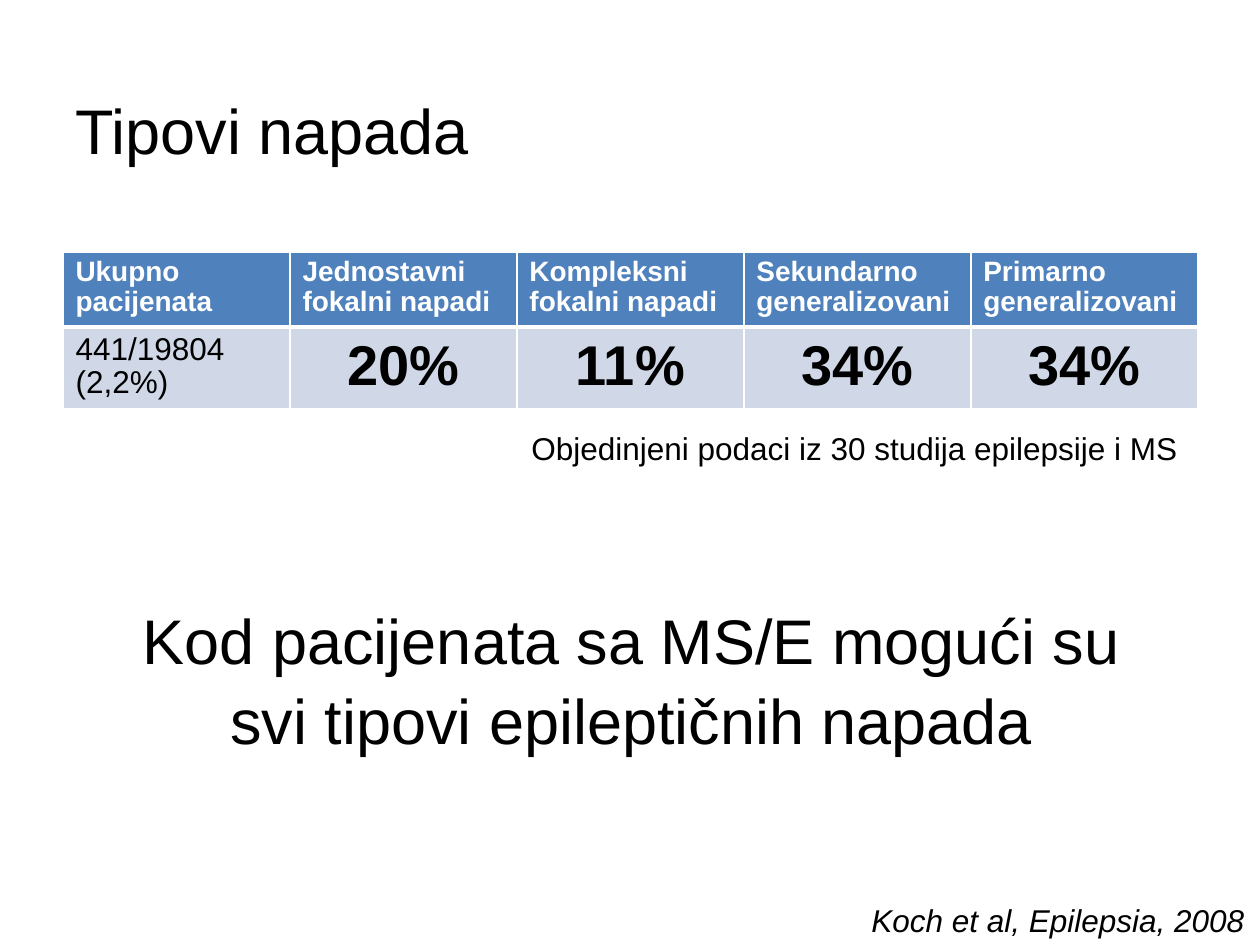
from lxml import etree
from pptx import Presentation
from pptx.dml.color import RGBColor
from pptx.enum.text import MSO_ANCHOR, PP_ALIGN
from pptx.oxml.ns import qn
from pptx.util import Emu, Pt

LEFT, CENTER = PP_ALIGN.LEFT, PP_ALIGN.CENTER
TOP, MIDDLE = MSO_ANCHOR.TOP, MSO_ANCHOR.MIDDLE
EMU_PER_PX = 914400 // 126
FONT, BLACK, WHITE = "Arial", "000000", "FFFFFF"
HEADER_FILL, BODY_FILL = "4F81BD", "D0D8E8"

TITLE = "Tipovi napada"
TITLE_BOX = (63, 38, 935, 183)
SEIZURES = [
    ("Ukupno pacijenata", "441/19804 (2,2%)"),
    ("Jednostavni fokalni napadi", "20%"),
    ("Kompleksni fokalni napadi", "11%"),
    ("Sekundarno generalizovani", "34%"),
    ("Primarno generalizovani", "34%"),
]
TABLE_LEFT, TABLE_TOP, COLUMN_WIDTH = 63, 252, 227
ROW_HEIGHTS = (75, 82)
NOTES = [
    dict(text="Kod pacijenata sa MS/E mogući su svi tipovi epileptičnih napada",
         box=(96, 592, 1071, 165), size=36, align=CENTER, wrap=True),
    dict(text="Objedinjeni podaci iz 30 studija epilepsije i MS",
         box=(519, 421, 678, 50), size=18),
    dict(text="Koch et al, Epilepsia, 2008",
         box=(859, 893, 402, 50), size=18, italic=True),
]


def px(value):
    return Emu(value * EMU_PER_PX)


def color(hex_code):
    return RGBColor.from_string(hex_code)


def write(frame, text, size, ink=BLACK, align=LEFT, bold=False, italic=False,
          spacing=None):
    frame.text = text
    paragraph = frame.paragraphs[0]
    paragraph.alignment = align
    paragraph.line_spacing = spacing
    font = paragraph.runs[0].font
    font.name, font.size = FONT, Pt(size)
    font.bold, font.italic = bold, italic
    font.color.rgb = color(ink)


def set_borders(cell, bottom_width):
    properties = cell._tc.get_or_add_tcPr()
    widths = {"a:lnL": 1, "a:lnR": 1, "a:lnT": 1, "a:lnB": bottom_width}
    for index, (side, width) in enumerate(widths.items()):
        line = etree.Element(qn(side), w=str(Pt(width)))
        fill = etree.SubElement(line, qn("a:solidFill"))
        etree.SubElement(fill, qn("a:srgbClr"), val=WHITE)
        properties.insert(index, line)


def fill_cell(cell, text, fill, bottom_width, anchor=TOP, **style):
    write(cell.text_frame, text, spacing=0.95, **style)
    cell.vertical_anchor = anchor
    cell.fill.solid()
    cell.fill.fore_color.rgb = color(fill)
    set_borders(cell, bottom_width)


def add_seizure_table(slide):
    table = slide.shapes.add_table(
        len(ROW_HEIGHTS), len(SEIZURES), px(TABLE_LEFT), px(TABLE_TOP),
        px(COLUMN_WIDTH * len(SEIZURES)), px(sum(ROW_HEIGHTS))).table
    for row, height in zip(table.rows, ROW_HEIGHTS):
        row.height = px(height)
    for index, (heading, value) in enumerate(SEIZURES):
        table.columns[index].width = px(COLUMN_WIDTH)
        fill_cell(table.cell(0, index), heading, HEADER_FILL, 3,
                  size=16, ink=WHITE, bold=True)
        if index == 0:
            value_style = dict(size=18)
        else:
            value_style = dict(size=32, bold=True, align=CENTER, anchor=MIDDLE)
        fill_cell(table.cell(1, index), value, BODY_FILL, 1, **value_style)


def add_note(slide, text, box, wrap=False, **style):
    frame = slide.shapes.add_textbox(*map(px, box)).text_frame
    frame.word_wrap = wrap
    write(frame, text, spacing=1.05, **style)


def main():
    deck = Presentation()
    deck.slide_width, deck.slide_height = px(1260), px(945)
    slide = deck.slides.add_slide(deck.slide_layouts[5])
    title = slide.shapes.title
    title.left, title.top, title.width, title.height = map(px, TITLE_BOX)
    write(title.text_frame, TITLE, size=36)
    title.text_frame.vertical_anchor = MIDDLE
    add_seizure_table(slide)
    for note in NOTES:
        add_note(slide, **note)
    deck.save("out.pptx")


if __name__ == "__main__":
    main()
